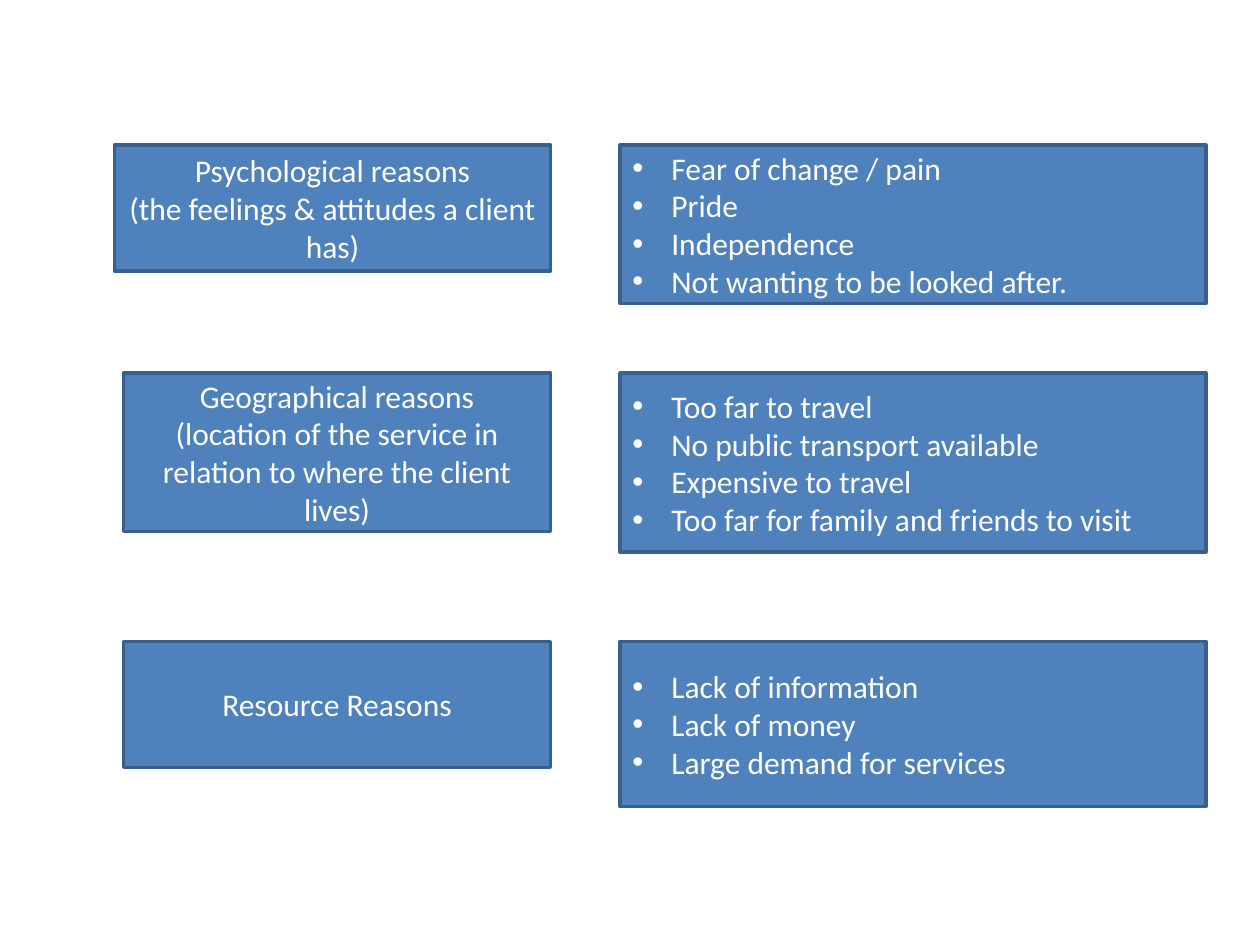
from dataclasses import dataclass

from lxml.etree import SubElement
from pptx import Presentation
from pptx.dml.color import RGBColor
from pptx.enum.shapes import MSO_SHAPE
from pptx.enum.text import MSO_ANCHOR, PP_ALIGN
from pptx.oxml.ns import qn
from pptx.util import Inches, Pt


@dataclass(frozen=True)
class Theme:
    fill: RGBColor = RGBColor(0x4F, 0x81, 0xBD)
    line: RGBColor = RGBColor(0x3A, 0x5F, 0x8C)
    text: RGBColor = RGBColor(0xFF, 0xFF, 0xFF)
    font: str = "Calibri"
    size: int = 18
    line_width: int = 2
    indent: float = 0.31


THEME = Theme()

# Column edges in inches
REASON_RIGHT = 4.37
EXAMPLES_LEFT, EXAMPLES_WIDTH = 4.92, 4.65

# Rows: top, reason width and height, examples height, reason text, examples
ROWS = [
    (1.15, 3.46, 1.0, 1.26,
     ["Psychological reasons", "(the feelings & attitudes a client has)"],
     ["Fear of change / pain", "Pride", "Independence",
      "Not wanting to be looked after."]),
    (2.96, 3.39, 1.26, 1.42,
     ["Geographical reasons",
      "(location of the service in relation to where the client lives)"],
     ["Too far to travel", "No public transport available",
      "Expensive to travel", "Too far for family and friends to visit"]),
    (5.09, 3.39, 1.0, 1.31,
     ["Resource Reasons"],
     ["Lack of information", "Lack of money", "Large demand for services"]),
]


def add_bullet(p):
    pPr = p._p.get_or_add_pPr()
    indent = Inches(THEME.indent)
    pPr.set("marL", str(indent))
    pPr.set("indent", str(-indent))
    SubElement(pPr, qn("a:buFont")).set("typeface", "Arial")
    SubElement(pPr, qn("a:buChar")).set("char", "•")


def add_box(slide, box, lines, bulleted=False):
    sp = slide.shapes.add_shape(MSO_SHAPE.RECTANGLE, *map(Inches, box))
    sp.shadow.inherit = False
    sp.fill.solid()
    sp.fill.fore_color.rgb = THEME.fill
    sp.line.color.rgb = THEME.line
    sp.line.width = Pt(THEME.line_width)

    tf = sp.text_frame
    tf.word_wrap = True
    tf.vertical_anchor = MSO_ANCHOR.MIDDLE
    tf.text = "\n".join(lines)
    for p in tf.paragraphs:
        p.alignment = PP_ALIGN.LEFT if bulleted else PP_ALIGN.CENTER
        if bulleted:
            add_bullet(p)
        font = p.runs[0].font
        for name, value in {"name": THEME.font, "size": Pt(THEME.size)}.items():
            setattr(font, name, value)
        font.color.rgb = THEME.text


def add_row(slide, top, width, height, examples_height, reason, examples):
    # Reason on the left, its examples on the right
    add_box(slide, (REASON_RIGHT - width, top, width, height), reason)
    add_box(slide, (EXAMPLES_LEFT, top, EXAMPLES_WIDTH, examples_height),
            examples, bulleted=True)


def main():
    prs = Presentation()
    prs.slide_width, prs.slide_height = Inches(10), Inches(7.5)
    slide = prs.slides.add_slide(prs.slide_layouts[6])
    for row in ROWS:
        add_row(slide, *row)
    prs.save("out.pptx")


if __name__ == "__main__":
    main()
